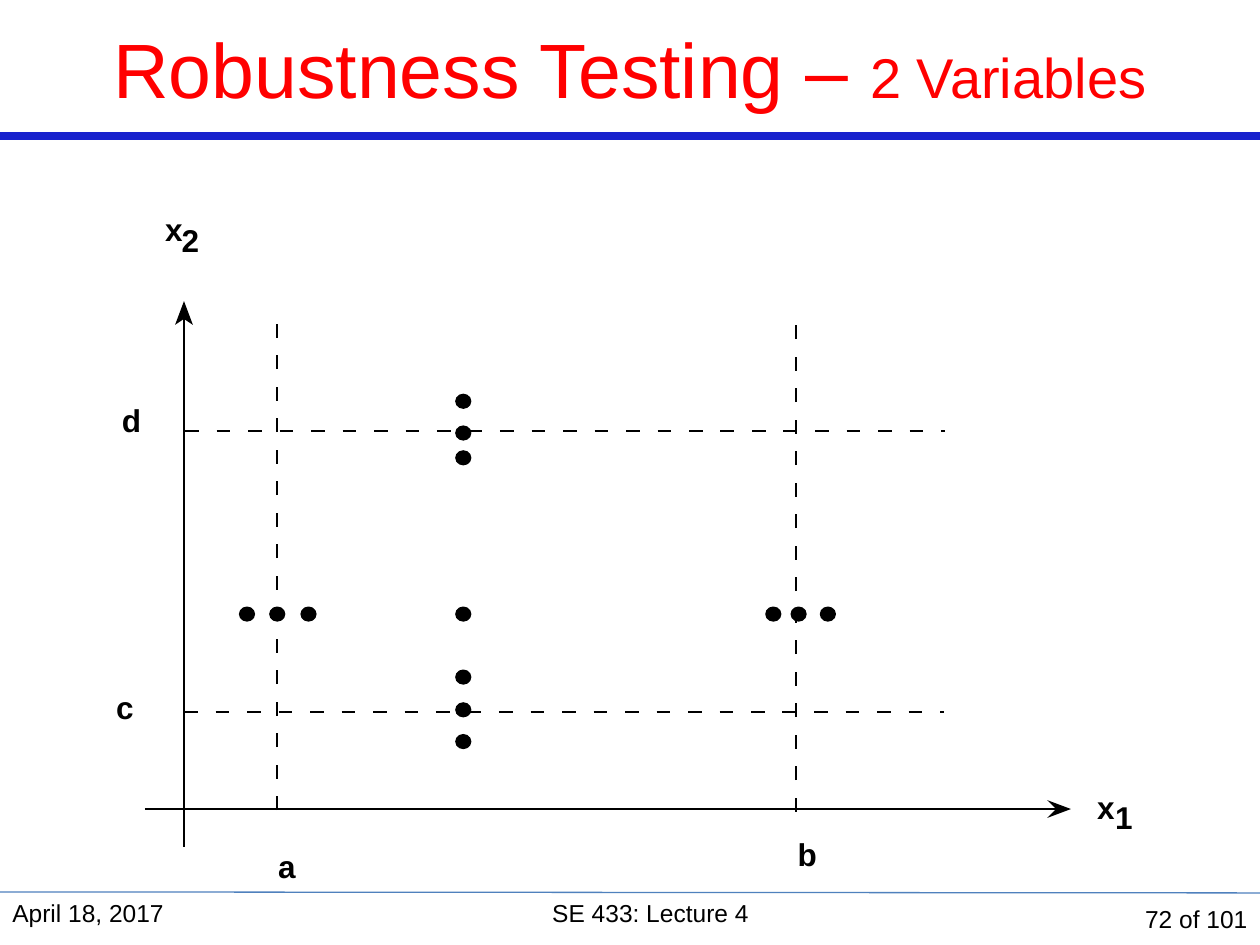
from dataclasses import dataclass

from lxml import etree
from pptx import Presentation
from pptx import util as u
from pptx.dml.color import RGBColor
from pptx.enum import shapes, text
from pptx.oxml.ns import qn

Cm = u.Cm


@dataclass(frozen=True)
class Theme:
    font: str = "Arial"
    ink: str = "000000"
    red: str = "FF0000"
    blue: str = "1822CD"
    pale: str = "4F81BD"
    head: int = 44
    sub: int = 32
    label: int = 18
    small: int = 14


@dataclass(frozen=True)
class Box:
    x: float
    y: float
    w: float
    h: float

    def at(self, dx, dy):
        return Cm(self.x + dx), Cm(self.y + dy)


T = Theme()
ALIGN = text.PP_ALIGN
ANCHOR = text.MSO_ANCHOR


def write(slide, box, runs, color=T.ink, bold=False, align=ALIGN.LEFT,
          anchor=ANCHOR.TOP, tight=False):
    """Place a text box; runs is a list of (words, size) pairs."""
    shape = slide.shapes.add_textbox(*box.at(0, 0), Cm(box.w), Cm(box.h))
    frame = shape.text_frame
    frame.word_wrap = not tight
    frame.vertical_anchor = anchor
    if tight:
        frame.margin_left = frame.margin_right = 0
        frame.margin_top = frame.margin_bottom = 0
        frame.auto_size = text.MSO_AUTO_SIZE.SHAPE_TO_FIT_TEXT
    para = frame.paragraphs[0]
    para.alignment = align
    for words, size in runs:
        run = para.add_run()
        run.text = words
        run.font.name = T.font
        run.font.size = u.Pt(size)
        run.font.bold = bold
        run.font.color.rgb = RGBColor.from_string(color)


def rule(slide, box, start, end, color=T.ink, width=1):
    """Draw a straight line between two points of the box."""
    line = slide.shapes.add_connector(
        shapes.MSO_CONNECTOR.STRAIGHT, *box.at(*start), *box.at(*end))
    line.line.color.rgb = RGBColor.from_string(color)
    line.line.width = u.Pt(width)
    etree.SubElement(line._element.spPr, qn("a:effectLst"))


def paint(shape):
    shape.shadow.inherit = False
    shape.fill.solid()
    shape.fill.fore_color.rgb = RGBColor.from_string(T.ink)


def tip(slide, box, points):
    """Draw a filled arrow tip."""
    first, *rest = [box.at(*point) for point in points]
    build = slide.shapes.build_freeform(*first)
    build.add_line_segments(rest, close=True)
    shape = build.convert_to_shape()
    paint(shape)
    shape.line.fill.background()


def dashes(slide, box, start, end):
    """Draw a level or upright row of dashes from start to end."""
    pitch, dash = 2.54 / 4, 0.28
    (x, y), (ex, ey) = start, end
    size = abs(ex - x) + abs(ey - y)
    ux, uy = (ex - x) / size, (ey - y) / size
    for i in range(int(size / pitch) + 1):
        near = i * pitch
        far = min(near + dash, size)
        rule(slide, box, (x + ux * near, y + uy * near),
             (x + ux * far, y + uy * far))


def dot(slide, box, x, y):
    shape = slide.shapes.add_shape(
        shapes.MSO_SHAPE.OVAL, *box.at(x, y), Cm(0.3), Cm(0.28))
    paint(shape)
    shape.line.color.rgb = RGBColor.from_string(T.ink)
    shape.line.width = u.Pt(0.75)


def header(slide, box):
    rule(slide, box, (0, box.h), (box.w, box.h), T.blue, 4.5)
    write(slide, box, [("Robustness Testing – ", T.head),
                       ("2 Variables", T.sub)],
          color=T.red, align=ALIGN.CENTER, anchor=ANCHOR.MIDDLE)


def plot(slide, box):
    w, h = box.w, box.h
    # Axes
    rule(slide, box, (0, 11), (0, 0.36))
    tip(slide, box, [(0, 0), (0.18, 0.48), (0, 0.36), (-0.18, 0.48)])
    rule(slide, box, (-0.79, h), (w - 0.3, h))
    tip(slide, box, [(w, h), (w - 0.48, h + 0.18),
                     (w - 0.3, h), (w - 0.48, h - 0.18)])

    # Limits c, d, a and b
    dashes(slide, box, (0, 8.28), (15.31, 8.28))
    dashes(slide, box, (0.02, 2.62), (15.34, 2.62))
    dashes(slide, box, (1.87, 10.26), (1.87, 0.46))
    dashes(slide, box, (12.34, 10.29), (12.34, 0.48))

    # Test points: one column and one row that cross
    col, row = 5.48, 6.17
    for y in (1.88, 2.52, 3.02, row, 7.44, 8.1, 8.74):
        dot(slide, box, col, y)
    for x in (1.12, 1.73, 2.36, 11.73, 12.24, 12.83):
        dot(slide, box, x, row)

    # Labels
    for word, x, y in (("a", 1.9, 11), ("b", 12.37, 10.77),
                       ("c", -1.37, 7.8), ("d", -1.25, 2.01),
                       ("x", -0.38, -1.83), ("2", -0.05, -1.62),
                       ("x", 18.41, 9.81), ("1", 18.77, 10.01)):
        write(slide, Box(box.x + x, box.y + y, 0.36, 0.76),
              [(word, T.label)], bold=True, tight=True)


def footer(slide, box):
    rule(slide, box, (0, 0), (box.w, 0.02), T.pale, 0.75)
    for words, x, w, align, anchor in (
            ("April 18, 2017", 0, 5.5, ALIGN.LEFT, ANCHOR.TOP),
            ("SE 433: Lecture 4", 5.28, 15.67, ALIGN.CENTER, ANCHOR.TOP),
            ("72 of 101", 21.16, 4.24, ALIGN.RIGHT, ANCHOR.MIDDLE)):
        write(slide, Box(box.x + x, box.y, w, box.h), [(words, T.small)],
              align=align, anchor=anchor)


def main():
    deck = Presentation()
    deck.slide_width, deck.slide_height = Cm(25.4), Cm(19.05)
    slide = deck.slides.add_slide(deck.slide_layouts[6])
    header(slide, Box(0, 0, 25.4, 2.74))
    plot(slide, Box(3.71, 6.07, 17.88, 10.24))
    footer(slide, Box(0, 17.98, 25.4, 1.07))
    deck.save("out.pptx")


if __name__ == "__main__":
    main()
